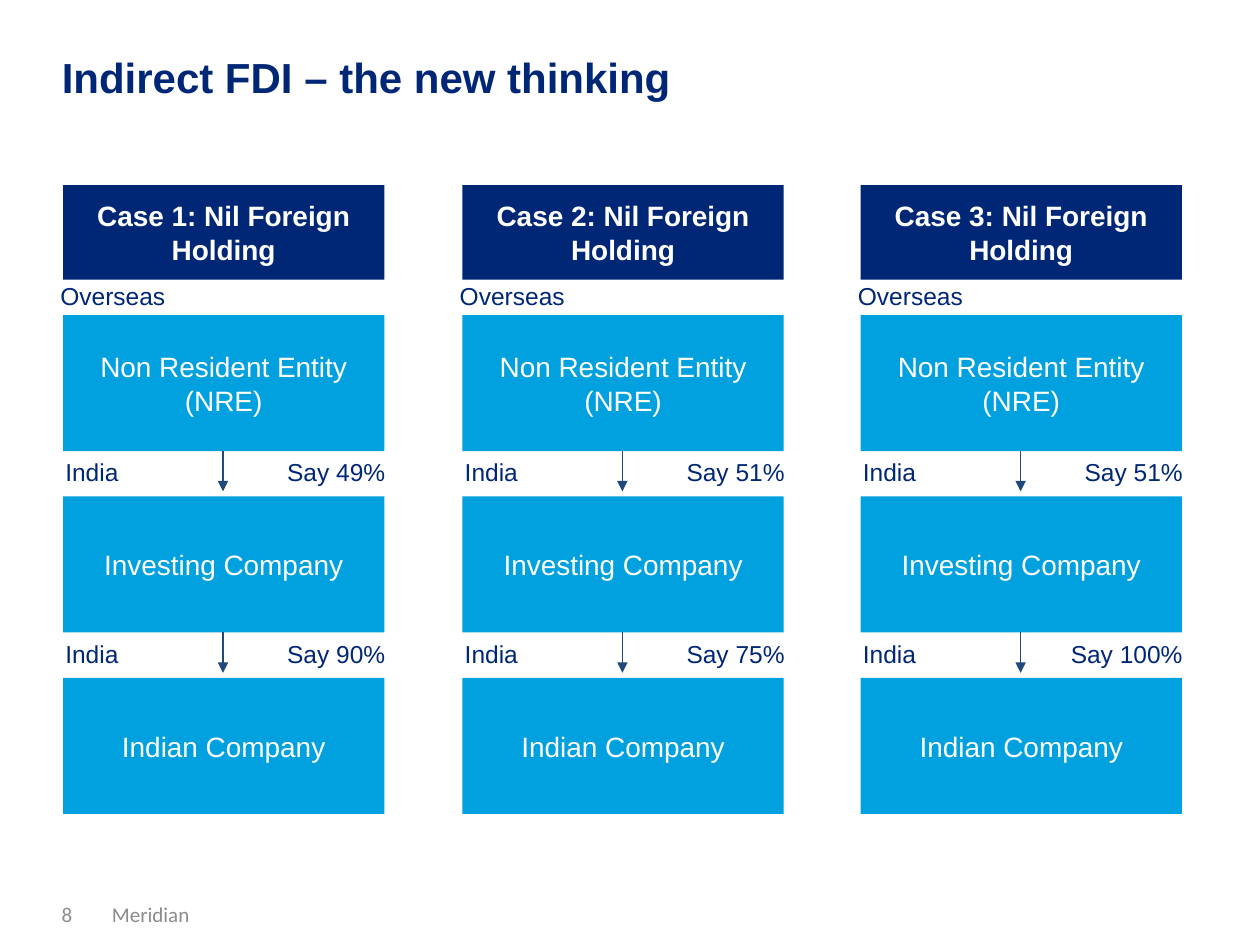
import dataclasses

import lxml.etree
import pptx
import pptx.dml.color
import pptx.enum.shapes
import pptx.enum.text
import pptx.oxml.ns
import pptx.util

PX = 9144  # EMU per px, 100 px to the inch
NAVY, SKY, WHITE, ARROW, GREY = "002776", "00A1DE", "FFFFFF", "1F497D", "8C8C8C"
ALIGN = pptx.enum.text.PP_ALIGN
ANCHOR = pptx.enum.text.MSO_ANCHOR

# Grid of the three cases
LEFT, BOX_WIDTH = 50, 255
HEADER_TOP, HEADER_HEIGHT = 147, 75
ENTITY_TOP, ENTITY_HEIGHT, ENTITY_PITCH = 250, 108, 144
ENTITIES = ("Non Resident Entity (NRE)", "Investing Company", "Indian Company")


@dataclasses.dataclass(frozen=True)
class Case:
    heading: str
    stakes: tuple[str, str]


@dataclasses.dataclass(frozen=True)
class Style:
    size: int
    color: str
    bold: bool = False
    font: str = "Arial"
    align: ALIGN = ALIGN.LEFT
    anchor: ANCHOR = ANCHOR.TOP
    wrap: bool = True


CASES = (
    Case("Case 1: Nil Foreign Holding", ("Say 49%", "Say 90%")),
    Case("Case 2: Nil Foreign Holding", ("Say 51%", "Say 75%")),
    Case("Case 3: Nil Foreign Holding", ("Say 51%", "Say 100%")),
)
TITLE = Style(24, NAVY, bold=True, anchor=ANCHOR.MIDDLE)
HEADER = Style(16, WHITE, bold=True, align=ALIGN.CENTER, anchor=ANCHOR.MIDDLE)
ENTITY = Style(16, WHITE, align=ALIGN.CENTER, anchor=ANCHOR.MIDDLE)
REGION = Style(14, NAVY)
LABEL = Style(14, NAVY, wrap=False)
FOOTER = Style(12, GREY, font="Calibri", anchor=ANCHOR.MIDDLE)


def rgb(value: str) -> pptx.dml.color.RGBColor:
    return pptx.dml.color.RGBColor.from_string(value)


def emu(*lengths: int) -> list[int]:
    return [length * PX for length in lengths]


def write(shape, text: str, style: Style) -> None:
    frame = shape.text_frame
    frame.text = text
    frame.word_wrap = style.wrap
    frame.auto_size = pptx.enum.text.MSO_AUTO_SIZE.NONE
    frame.vertical_anchor = style.anchor
    paragraph = frame.paragraphs[0]
    paragraph.alignment = style.align
    font = paragraph.runs[0].font
    font.name = style.font
    font.size = pptx.util.Pt(style.size)
    font.bold = style.bold
    font.color.rgb = rgb(style.color)


def add_box(slide, left: int, top: int, height: int, fill: str, text: str, style: Style) -> None:
    box = slide.shapes.add_shape(
        pptx.enum.shapes.MSO_SHAPE.RECTANGLE, *emu(left, top, BOX_WIDTH, height))
    box.shadow.inherit = False
    box.fill.solid()
    box.fill.fore_color.rgb = rgb(fill)
    box.line.fill.background()
    write(box, text, style)


def add_label(slide, left: int, top: int, width: int, height: int, text: str, style: Style) -> None:
    write(slide.shapes.add_textbox(*emu(left, top, width, height)), text, style)


def add_arrow(slide, x: int, top: int, length: int) -> None:
    arrow = slide.shapes.add_connector(
        pptx.enum.shapes.MSO_CONNECTOR.STRAIGHT, *emu(x, top, x, top + length))
    arrow.line.color.rgb = rgb(ARROW)
    arrow.line.width = pptx.util.Pt(1)
    qn = pptx.oxml.ns.qn
    lxml.etree.SubElement(arrow.line._get_or_add_ln(), qn("a:tailEnd"), type="triangle")
    lxml.etree.SubElement(arrow._element.spPr, qn("a:effectLst"))


def add_case(slide, left: int, case: Case) -> None:
    add_box(slide, left, HEADER_TOP, HEADER_HEIGHT, NAVY, case.heading, HEADER)
    add_label(slide, left - 12, 218, 142, 57, "Overseas", REGION)
    for row, entity in enumerate(ENTITIES):
        top = ENTITY_TOP + row * ENTITY_PITCH
        add_box(slide, left, top, ENTITY_HEIGHT, SKY, entity, ENTITY)

    # Stake held in the company below
    for row, stake in enumerate(case.stakes):
        top = ENTITY_TOP + row * ENTITY_PITCH + ENTITY_HEIGHT
        add_label(slide, left - 8, top, 63, 34, "India", LABEL)
        width = 22 + 11 * len(stake)
        add_label(slide, left + 267 - width, top, width, 34, stake, LABEL)
        add_arrow(slide, left + BOX_WIDTH // 2, top, 32)


def main() -> None:
    deck = pptx.Presentation()
    deck.slide_width, deck.slide_height = emu(1000, 750)
    slide = deck.slides.add_slide(deck.slide_layouts[5])

    # Title
    title = slide.shapes.title
    title.left, title.top, title.width, title.height = emu(39, 26, 630, 69)
    write(title, "Indirect FDI – the new thinking", TITLE)

    # Cases, 316.5 px apart
    for column, case in enumerate(CASES):
        add_case(slide, LEFT + (633 * column + 1) // 2, case)

    # Footer
    add_label(slide, 39, 719, 39, 13, "8", FOOTER)
    add_label(slide, 79, 719, 591, 13, "Meridian", FOOTER)
    deck.save("out.pptx")


if __name__ == "__main__":
    main()
